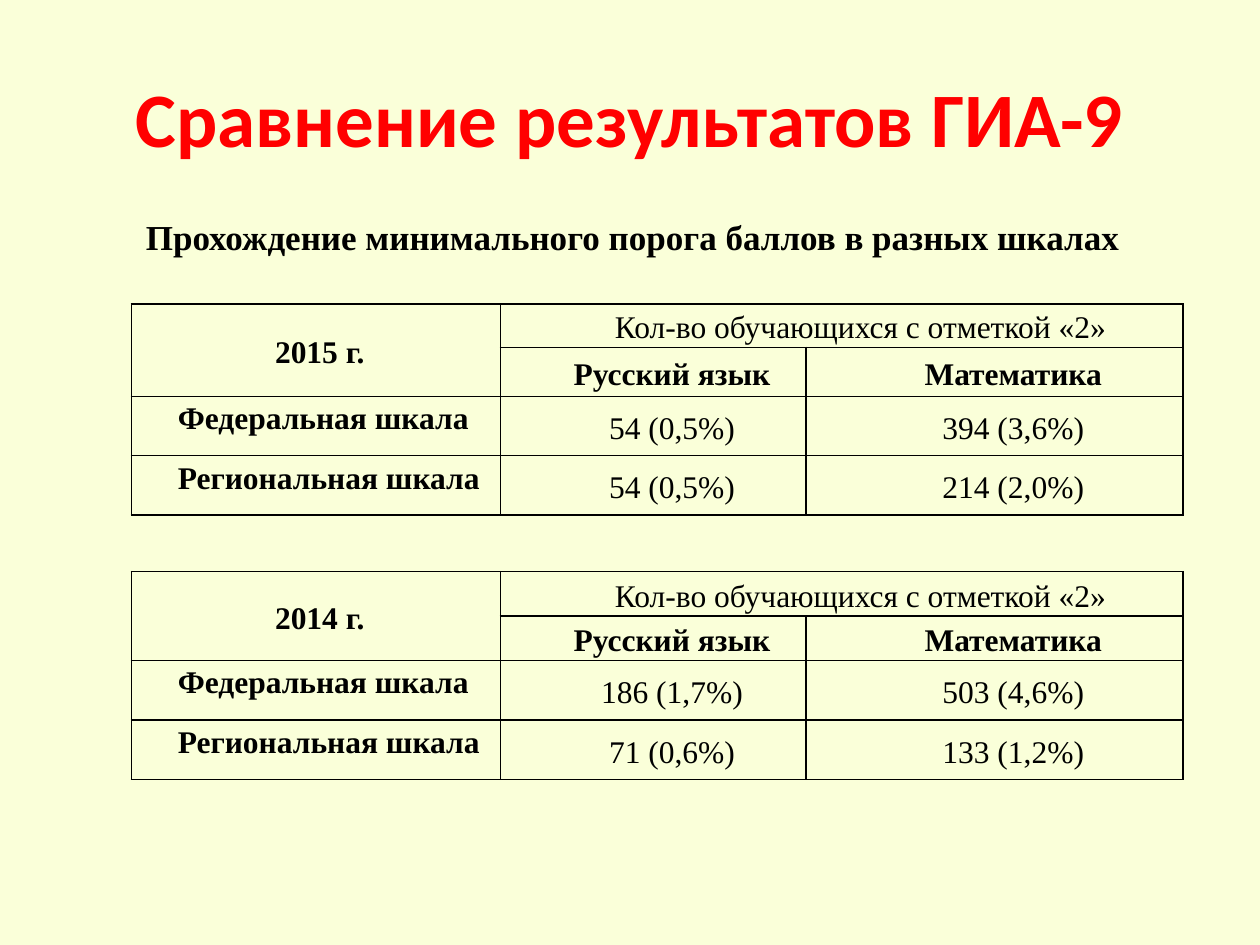
from dataclasses import dataclass

from lxml.etree import SubElement
from pptx import Presentation
from pptx.dml.color import RGBColor
from pptx.enum.text import MSO_ANCHOR, PP_ALIGN
from pptx.oxml.ns import qn
from pptx.util import Pt


@dataclass(frozen=True)
class Theme:
    back: str = "FAFFD9"
    ink: str = "000000"
    red: str = "FF0000"
    sans: str = "Calibri"
    serif: str = "Times New Roman"
    title: int = 44
    lead: int = 20
    body: int = 18


class Deck:
    def __init__(self, theme):
        self.theme = theme
        self.prs = Presentation()
        self.prs.slide_width, self.prs.slide_height = Pt(720), Pt(540)
        self.slide = self.prs.slides.add_slide(self.prs.slide_layouts[6])
        fill = self.slide.background.fill
        fill.solid()
        fill.fore_color.rgb = RGBColor.from_string(theme.back)

    def style(self, para, face, size, color, bold, align):
        font = para.font
        font.name, font.size, font.bold = face, Pt(size), bold
        font.color.rgb = RGBColor.from_string(color)
        para.alignment = align

    def text(self, box, words, face, size, color, align, anchor):
        shape = self.slide.shapes.add_textbox(*map(Pt, box))
        frame = shape.text_frame
        frame.word_wrap = True
        frame.vertical_anchor = anchor
        para = frame.paragraphs[0]
        para.text = words
        self.style(para, face, size, color, True, align)

    def border(self, cell):
        props = cell._tc.get_or_add_tcPr()
        for side in ("lnL", "lnR", "lnT", "lnB"):
            line = SubElement(props, qn(f"a:{side}"), w=str(Pt(1)))
            paint = SubElement(line, qn("a:solidFill"))
            SubElement(paint, qn("a:srgbClr"), val=self.theme.ink)

    def cell(self, cell, words, bold, align, anchor, indent):
        cell.margin_left = cell.margin_right = Pt(5)
        cell.margin_top = cell.margin_bottom = 0
        cell.vertical_anchor = anchor
        para = cell.text_frame.paragraphs[0]
        para.text = words
        para.line_spacing = 1.15
        para._p.get_or_add_pPr().set("indent", str(Pt(indent)))
        self.style(para, self.theme.serif, self.theme.body, self.theme.ink, bold, align)

    def table(self, left, top, cols, rows, data):
        frame = self.slide.shapes.add_table(
            len(rows), len(cols), Pt(left), Pt(top), Pt(sum(cols)), Pt(sum(rows)))
        grid = frame.table
        grid.first_row = grid.horz_banding = False
        for col, width in zip(grid.columns, cols):
            col.width = Pt(width)
        for row, height in zip(grid.rows, rows):
            row.height = Pt(height)
        # Year spans two rows, heading spans two columns
        grid.cell(0, 0).merge(grid.cell(1, 0))
        grid.cell(0, 1).merge(grid.cell(0, 2))
        for r, line in enumerate(data):
            for c, words in enumerate(line):
                cell = grid.cell(r, c)
                self.border(cell)
                cell.fill.background()
                label = c == 0 and r > 1
                self.cell(
                    cell, words,
                    bold=c == 0 or r == 1,
                    align=PP_ALIGN.LEFT if label else PP_ALIGN.CENTER,
                    anchor=MSO_ANCHOR.TOP if label else MSO_ANCHOR.MIDDLE,
                    indent=0 if (r, c) == (0, 0) else 21.6)


def main():
    theme = Theme()
    deck = Deck(theme)

    # Title and lead line
    deck.text((36, 21.6, 648, 90), "Сравнение результатов ГИА-9", theme.sans,
              theme.title, theme.red, PP_ALIGN.CENTER, MSO_ANCHOR.MIDDLE)
    deck.text((76.3, 119.5, 601, 31.7),
              "Прохождение минимального порога баллов в разных шкалах", theme.serif,
              theme.lead, theme.ink, PP_ALIGN.LEFT, MSO_ANCHOR.TOP)

    # One table for each year: top, head row heights, scores by scale
    years = (
        ("2015 г.", 173.6, (23, 28), ("54 (0,5%)", "394 (3,6%)"), ("54 (0,5%)", "214 (2,0%)")),
        ("2014 г.", 326.7, (25.4, 25.4), ("186 (1,7%)", "503 (4,6%)"), ("71 (0,6%)", "133 (1,2%)")),
    )
    for year, top, head, state, local in years:
        data = (
            (" " + year, "Кол-во обучающихся с отметкой «2»", ""),
            ("", "Русский язык", "Математика"),
            ("Федеральная шкала", *state),
            ("Региональная шкала", *local),
        )
        deck.table(75, top, (211, 174.5, 215.5), (*head, 34, 34), data)

    deck.prs.save("out.pptx")


if __name__ == "__main__":
    main()
